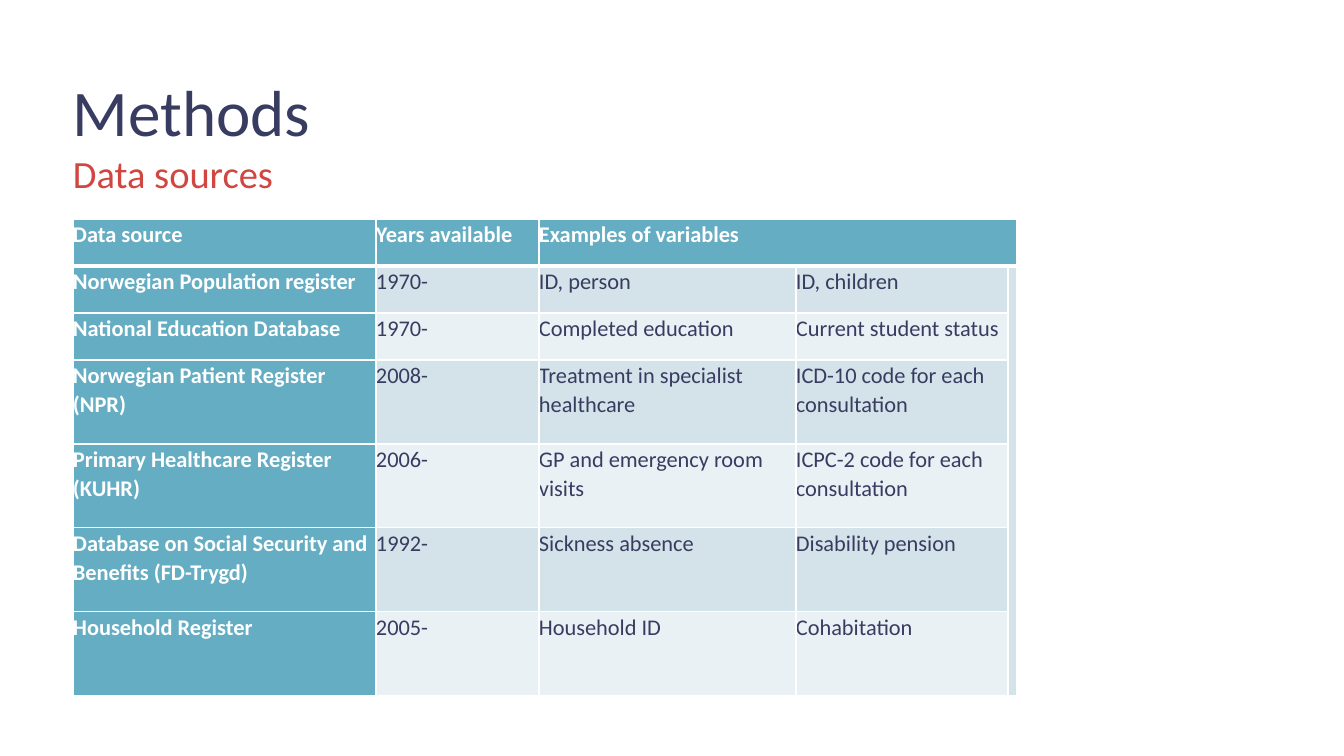
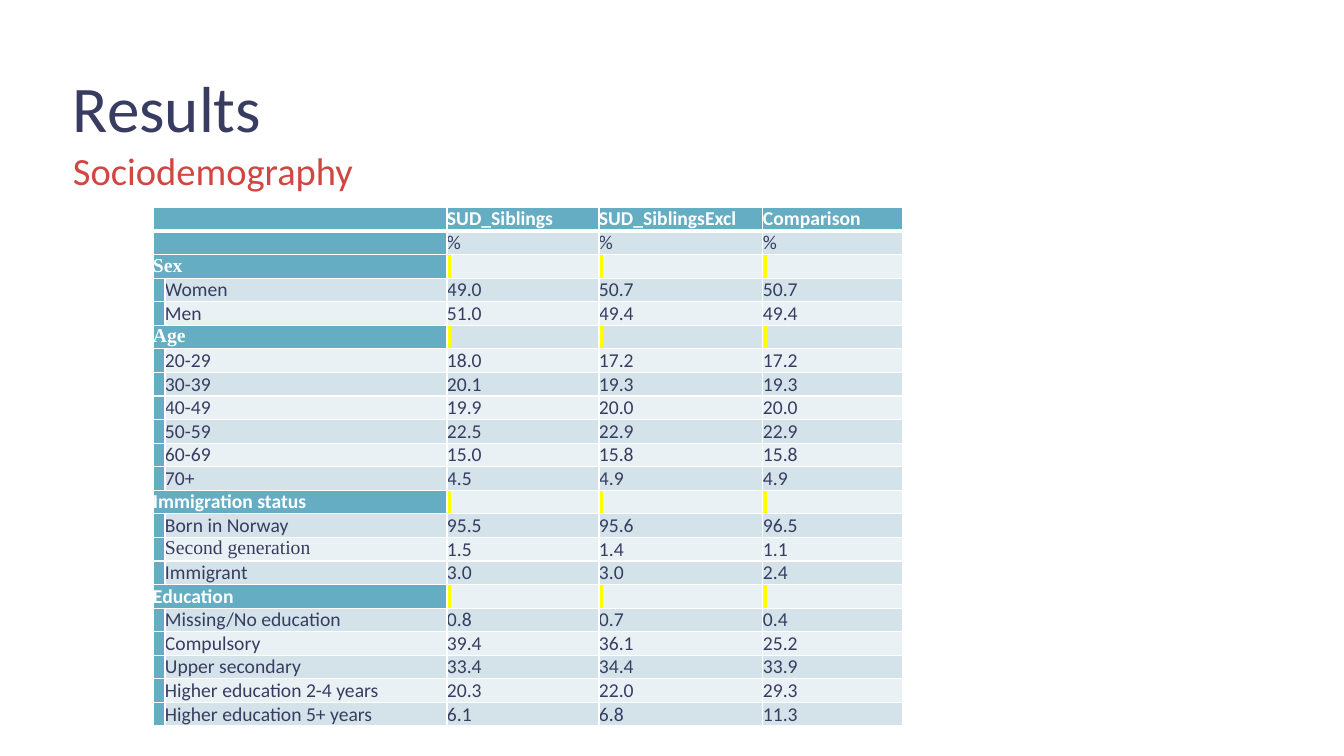
from lxml import etree
from pptx import Presentation
from pptx import util as u
from pptx.dml.color import RGBColor
from pptx.oxml.ns import qn

PX = 12192000 / 1344  # EMU in one px
HUES = {"ink": "393C61", "red": "D14641", "teal": "65ADC3", "odd": "D3E3E9",
        "even": "EAF1F5", "white": "FFFFFF", "mark": "FFFF00"}
SANS, SERIF = "Calibri", "Times New Roman"
MARK = chr(160)  # blank that carries a highlight
FLAT = {"margin_left": 0, "margin_top": 0, "margin_right": 0, "margin_bottom": 0}


def px(n):
    return u.Emu(round(n * PX))


def write(par, words, hue, font, gaps):
    """Put one formatted run in a paragraph; an empty one keeps its size."""
    for key, val in gaps.items():
        setattr(par, key, val)
    if not words:
        etree.SubElement(par._p, qn("a:endParaRPr"), sz=str(int(font["size"].pt * 100)))
        return
    run = par.add_run()
    run.text = words
    run.font.color.rgb = RGBColor.from_string(HUES[hue])
    for key, val in font.items():
        setattr(run.font, key, val)
    if words == MARK:
        glow = etree.Element(qn("a:highlight"))
        etree.SubElement(glow, qn("a:srgbClr"), val=HUES["mark"])
        run.font.fill._xPr.find(qn("a:solidFill")).addnext(glow)


# Table of data sources
sources = [
    ["Data source", "Years available", "Examples of variables", "", ""],
    ["Norwegian Population register", "1970-", "ID, person", "ID, children", ""],
    ["National Education Database", "1970-", "Completed education",
     "Current student status", ""],
    ["Norwegian Patient Register (NPR)", "2008-", "Treatment in specialist healthcare",
     "ICD-10 code for each consultation", ""],
    ["Primary Healthcare Register (KUHR)", "2006-", "GP and emergency room visits",
     "ICPC-2 code for each consultation", ""],
    ["Database on Social Security and Benefits (FD-Trygd)", "1992-", "Sickness absence",
     "Disability pension", ""],
    ["Household Register", "2005-", "Household ID", "Cohabitation", ""],
]

# Table of shares by group, in percent
groups = {
    "Sex": [("Women", "49.0", "50.7", "50.7"), ("Men", "51.0", "49.4", "49.4")],
    "Age": [("20-29", "18.0", "17.2", "17.2"), ("30-39", "20.1", "19.3", "19.3"),
            ("40-49", "19.9", "20.0", "20.0"), ("50-59", "22.5", "22.9", "22.9"),
            ("60-69", "15.0", "15.8", "15.8"), ("70+", "4.5", "4.9", "4.9")],
    "Immigration status": [("Born in Norway", "95.5", "95.6", "96.5"),
                           ("Second generation", "1.5", "1.4", "1.1"),
                           ("Immigrant", "3.0", "3.0", "2.4")],
    "Education": [("Missing/No education", "0.8", "0.7", "0.4"),
                  ("Compulsory", "39.4", "36.1", "25.2"),
                  ("Upper secondary", "33.4", "34.4", "33.9"),
                  ("Higher education 2-4 years", "20.3", "22.0", "29.3"),
                  ("Higher education 5+ years", "6.1", "6.8", "11.3")],
}
shares = [["", "", "SUD_Siblings", "SUD_SiblingsExcl", "Comparison"],
          ["", "", "%", "%", "%"]]
for head, lines in groups.items():
    shares.append([head, "", MARK, MARK, MARK])
    shares += [["", *line] for line in lines]

# Slides: heads with their tops, then the table; spans are (row, col, row, col)
pages = [
    {"heads": [("Methods", 80, 70), ("Data sources", 150, 46)],
     "at": (73, 219), "cols": [303, 163, 257, 212, 9], "rows": [47] * 3 + [84] * 4,
     "data": sources, "size": 16, "spans": [(0, 2, 0, 4), (1, 4, 6, 4)],
     "gaps": {"line_spacing": 1.07, "space_after": u.Pt(8)}},
    {"heads": [("Results", 76, 73), ("Sociodemography", 147, 46)],
     "at": (153, 207), "cols": [12, 282, 152, 164, 140], "rows": [24] + [19] * 21,
     "data": shares, "size": 14,
     "spans": [(r, 0, r, 1) for r, row in enumerate(shares) if not row[1]],
     "gaps": {}},
]
looks = [("ink", 46.5, {"line_spacing": 0.9}), ("red", 27.5, {})]

deck = Presentation()
deck.slide_width, deck.slide_height = px(1344), px(756)

for page in pages:
    slide = deck.slides.add_slide(deck.slide_layouts[6])

    # Title and subtitle
    for (words, top, high), (hue, size, gaps) in zip(page["heads"], looks):
        frame = slide.shapes.add_textbox(px(73), px(top), px(1198), px(high)).text_frame
        for key, val in {**FLAT, "word_wrap": True}.items():
            setattr(frame, key, val)
        write(frame.paragraphs[0], words, hue, {"size": u.Pt(size), "name": SANS}, gaps)

    # Table grid
    cols, rows, data = page["cols"], page["rows"], page["data"]
    grid = slide.shapes.add_table(len(rows), len(cols), *map(px, page["at"]),
                                  px(sum(cols)), px(sum(rows))).table
    grid.horz_banding = False
    for col, wide in zip(grid.columns, cols):
        col.width = px(wide)
    for row, high in zip(grid.rows, rows):
        row.height = px(high)
    for r, c, last, end in page["spans"]:
        grid.cell(r, c).merge(grid.cell(last, end))

    # Cells: teal head row and first column, banded body
    for r, line in enumerate(data):
        for c, words in enumerate(line):
            cell = grid.cell(r, c)
            for key, val in FLAT.items():
                setattr(cell, key, val)
            head = r == 0 or c == 0
            tint = "teal" if head else "odd" if r % 2 else "even"
            cell.fill.solid()
            cell.fill.fore_color.rgb = RGBColor.from_string(HUES[tint])
            face = SERIF if words in ("Sex", "Age", "Second generation") else SANS
            write(cell.text_frame.paragraphs[0], words, "white" if head else "ink",
                  {"size": u.Pt(page["size"]), "name": face, "bold": head}, page["gaps"])

            # White borders, thick under the head row
            edges = {"L": 1, "R": 1, "T": 3 if r == 1 else 1, "B": 3 if r == 0 else 1}
            for i, (side, wide) in enumerate(edges.items()):
                edge = etree.Element(qn("a:ln" + side), w=str(u.Pt(wide)))
                fill = etree.SubElement(edge, qn("a:solidFill"))
                etree.SubElement(fill, qn("a:srgbClr"), val=HUES["white"])
                cell._tc.tcPr.insert(i, edge)

deck.save("out.pptx")
